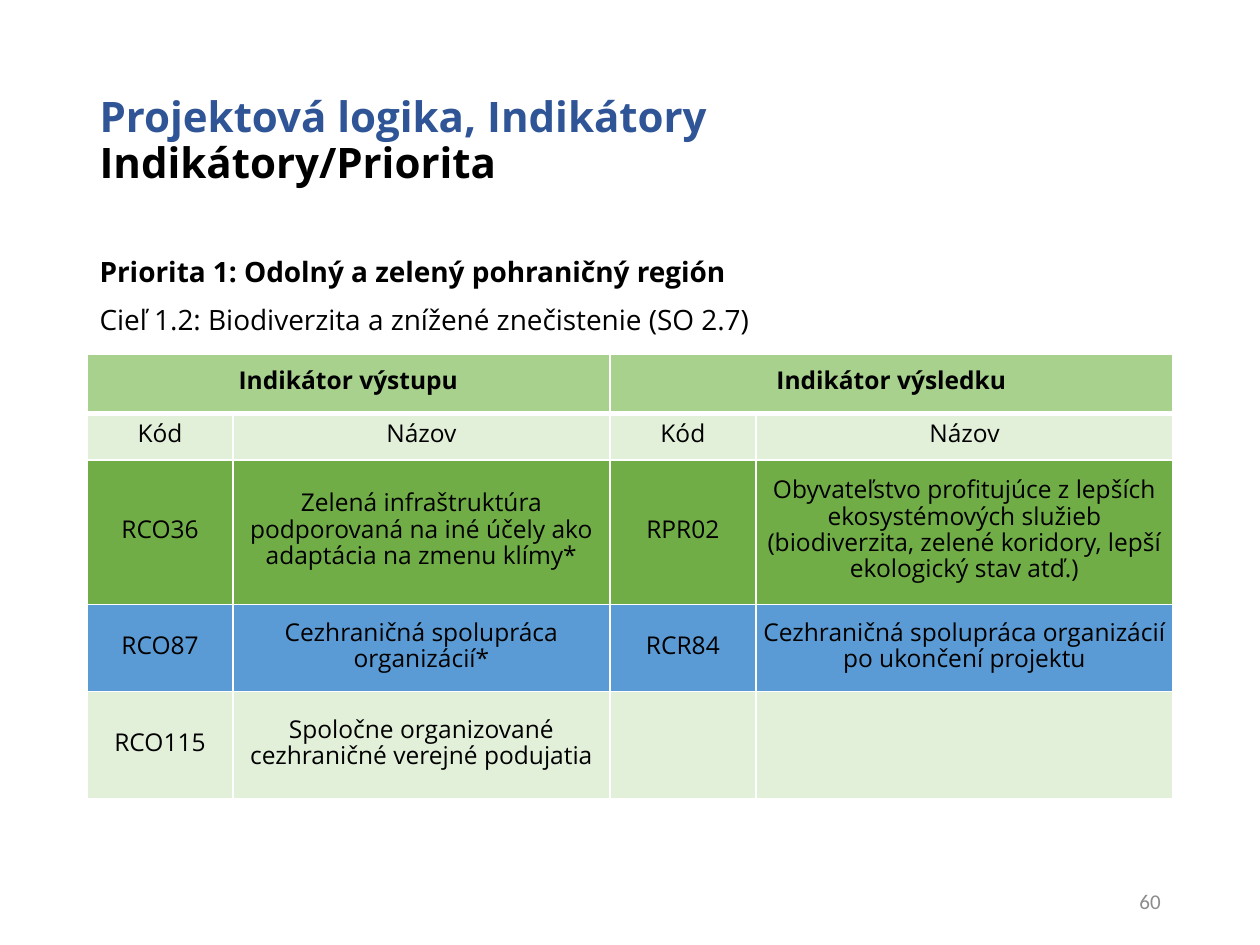
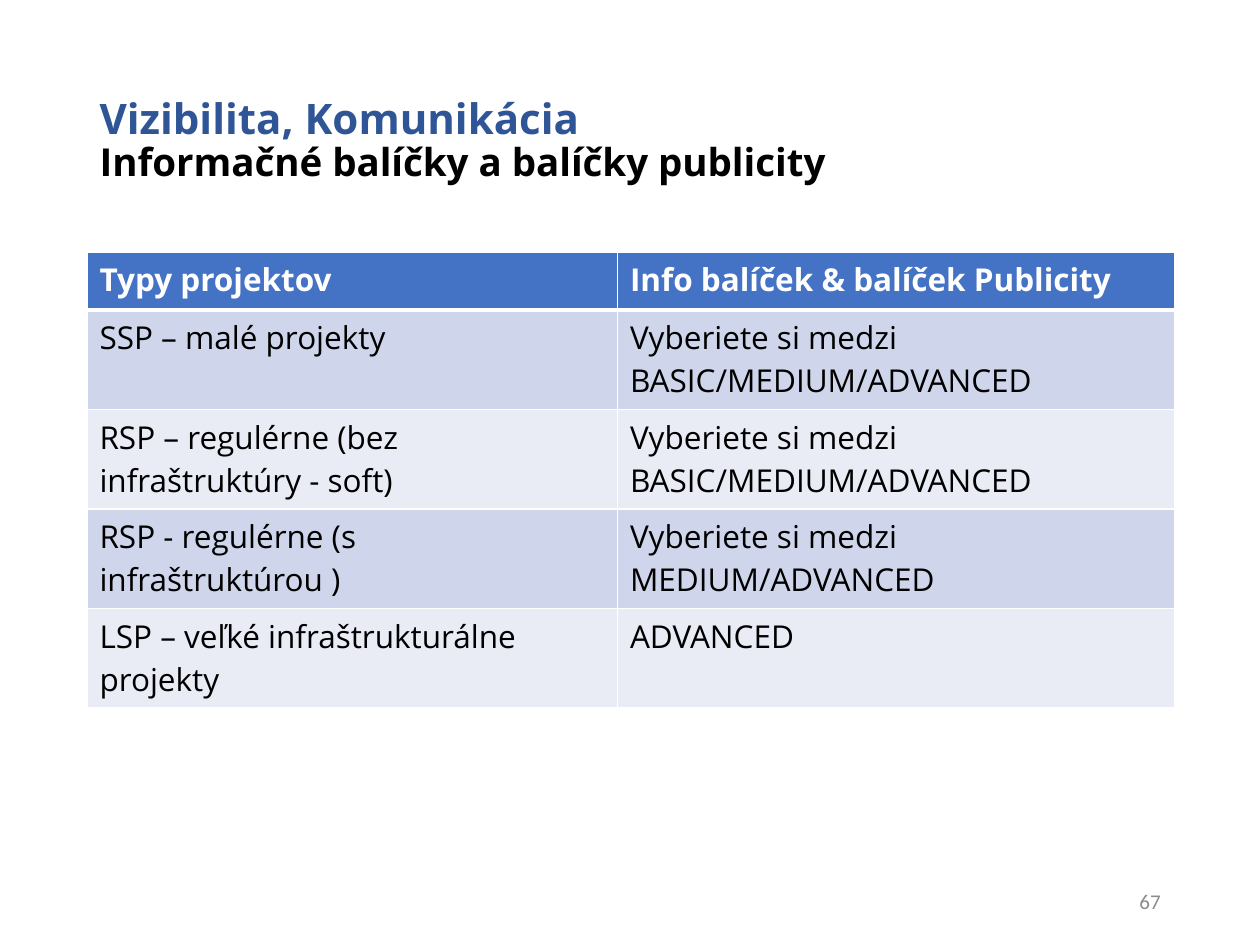
import dataclasses
import typing

import pptx
import pptx.dml.color
import pptx.enum.text
import pptx.oxml
import pptx.oxml.ns
import pptx.util

Inches, Pt = pptx.util.Inches, pptx.util.Pt
ALIGN, ANCHOR = pptx.enum.text.PP_ALIGN, pptx.enum.text.MSO_ANCHOR

# Shared look
FONT = "Open Sans"
BLACK, WHITE, NAVY, GREY = "000000", "FFFFFF", "2F5597", "8C8C8C"
GREEN, LIME, PALE, SKY = "70AD47", "A9D18E", "E2F0D9", "5B9BD5"
BLUE, MIST, HAZE = "4472C4", "CFD5EA", "E9EBF5"
LEFT, WIDE = 0.69, 8.62
XMLNS = pptx.oxml.ns.nsdecls("a")


@dataclasses.dataclass
class Span:
    text: str
    size: float
    color: str = BLACK
    bold: bool = False
    font: str = FONT


@dataclasses.dataclass
class Row:
    high: float
    fill: str
    texts: list[str]
    color: str = BLACK
    bold: bool = False


@dataclasses.dataclass
class Grid:
    top: float
    cols: list[float]
    rows: list[Row]
    size: float
    cell: dict[str, typing.Any] = dataclasses.field(default_factory=dict)
    para: dict[str, typing.Any] = dataclasses.field(default_factory=dict)
    pairs: bool = False  # header cells each span two columns


def paint(code: str) -> pptx.dml.color.RGBColor:
    return pptx.dml.color.RGBColor.from_string(code)


def apply(item: typing.Any, vals: dict[str, typing.Any]) -> None:
    for name, val in vals.items():
        setattr(item, name, val)


def place(shape: typing.Any, left: float, top: float, wide: float, high: float) -> None:
    apply(shape, {"left": Inches(left), "top": Inches(top),
                  "width": Inches(wide), "height": Inches(high)})


def write(para: typing.Any, span: Span) -> None:
    run = para.add_run()
    run.text = span.text
    apply(run.font, {"size": Pt(span.size), "bold": span.bold, "name": span.font})
    run.font.color.rgb = paint(span.color)


def add_title(slide: typing.Any, head: str, sub: str, size: float) -> None:
    title = slide.shapes.title
    place(title, LEFT, 0.4, WIDE, 1.45)
    apply(title.text_frame, {"vertical_anchor": ANCHOR.MIDDLE,
                             "auto_size": pptx.enum.text.MSO_AUTO_SIZE.NONE})
    para = title.text_frame.paragraphs[0]
    apply(para, {"alignment": ALIGN.LEFT, "line_spacing": 0.9})
    write(para, Span(head, 24, NAVY, True))
    para.add_line_break()
    write(para, Span(sub, size, bold=True))


def add_body(slide: typing.Any, spans: list[Span]) -> None:
    body = slide.placeholders[1]
    place(body, LEFT, 2, WIDE, 4.46)
    frame = body.text_frame
    frame.auto_size = pptx.enum.text.MSO_AUTO_SIZE.NONE
    for i, span in enumerate(spans):
        para = frame.add_paragraph() if i else frame.paragraphs[0]
        apply(para, {"line_spacing": 0.9, "space_before": Pt(10 if i else 0)})
        props = para._p.get_or_add_pPr()
        apply(props, {"marL": 0, "indent": 0})
        props.append(pptx.oxml.parse_xml(f"<a:buNone {XMLNS}/>"))
        write(para, span)


def add_page(slide: typing.Any, page: int) -> None:
    box = slide.shapes.add_textbox(Inches(7.06), Inches(6.95), Inches(2.25), Inches(0.4))
    apply(box.text_frame, {"word_wrap": True, "vertical_anchor": ANCHOR.MIDDLE})
    para = box.text_frame.paragraphs[0]
    para.alignment = ALIGN.RIGHT
    write(para, Span(str(page), 12, GREY, font="Calibri"))


def edge(cell: typing.Any, row: int) -> None:
    """White cell lines, with a thick one below the header row."""
    props = cell._tc.get_or_add_tcPr()
    thick = {"T": row == 1, "B": row == 0}
    for side in "LRTB":
        width = Pt(3 if thick.get(side) else 1)
        props.append(pptx.oxml.parse_xml(
            f'<a:ln{side} {XMLNS} w="{width}"><a:solidFill>'
            f'<a:srgbClr val="{WHITE}"/></a:solidFill></a:ln{side}>'))


def add_grid(slide: typing.Any, grid: Grid) -> None:
    high = sum(row.high for row in grid.rows)
    table = slide.shapes.add_table(len(grid.rows), len(grid.cols), Inches(LEFT),
                                   Inches(grid.top), Inches(WIDE), Inches(high)).table
    for col, wide in zip(table.columns, grid.cols):
        col.width = Inches(wide)
    for r, row in enumerate(grid.rows):
        table.rows[r].height = Inches(row.high)
        for c in range(len(grid.cols)):
            cell = table.cell(r, c)
            edge(cell, r)
            cell.fill.solid()
            cell.fill.fore_color.rgb = paint(row.fill)
            apply(cell, grid.cell)
        step = 2 if grid.pairs and r == 0 else 1
        for i, text in enumerate(row.texts):
            cell = table.cell(r, i * step)
            if step == 2:
                cell.merge(table.cell(r, i * step + 1))
            para = cell.text_frame.paragraphs[0]
            apply(para, grid.para)
            write(para, Span(text, grid.size, row.color, row.bold))


# Slide content
GOALS = [
    Span("Priorita 1: Odolný a zelený pohraničný región", 16, bold=True),
    Span("Cieľ 1.2: Biodiverzita a znížené znečistenie (SO 2.7)", 16),
]

CODES = Grid(2.81, [1.16, 2.99, 1.16, 3.31], [
    Row(0.47, LIME, ["Indikátor výstupu", "Indikátor výsledku"], bold=True),
    Row(0.37, PALE, ["Kód", "Názov"] * 2),
    Row(1.15, GREEN, [
        "RCO36",
        "Zelená infraštruktúra podporovaná na iné účely ako adaptácia na zmenu klímy*",
        "RPR02",
        "Obyvateľstvo profitujúce z lepších ekosystémových služieb "
        "(biodiverzita, zelené koridory, lepší ekologický stav atď.)"]),
    Row(0.69, SKY, [
        "RCO87", "Cezhraničná spolupráca organizácií*",
        "RCR84", "Cezhraničná spolupráca organizácií po ukončení projektu"]),
    Row(0.85, PALE, ["RCO115", "Spoločne organizované cezhraničné verejné podujatia"]),
], 14, pairs=True,
    cell={"vertical_anchor": ANCHOR.MIDDLE, "margin_left": Inches(0.05),
          "margin_right": Inches(0.05), "margin_top": 0, "margin_bottom": 0},
    para={"alignment": ALIGN.CENTER, "line_spacing": Pt(15)})

PICK = "Vyberiete si medzi "
TALL = 0.79  # fits two lines of text
PACKS = Grid(2, [4.21, 4.42], [
    Row(0.46, BLUE, ["Typy projektov", "Info balíček & balíček Publicity"], WHITE, True),
    Row(TALL, MIST, ["SSP – malé projekty", PICK + "BASIC/MEDIUM/ADVANCED"]),
    Row(TALL, HAZE, ["RSP – regulérne (bez infraštruktúry - soft)",
                     PICK + "BASIC/MEDIUM/ADVANCED"]),
    Row(TALL, MIST, ["RSP - regulérne (s infraštruktúrou )", PICK + "MEDIUM/ADVANCED"]),
    Row(TALL, HAZE, ["LSP – veľké infraštrukturálne projekty", "ADVANCED"]),
], 18)


def main() -> None:
    deck = pptx.Presentation()
    apply(deck, {"slide_width": Inches(10), "slide_height": Inches(7.5)})
    full, bare = deck.slide_layouts[1], deck.slide_layouts[5]

    # Indicators by priority
    slide = deck.slides.add_slide(full)
    add_title(slide, "Projektová logika, Indikátory", "Indikátory/Priorita", 24)
    add_body(slide, GOALS)
    add_page(slide, 60)
    add_grid(slide, CODES)

    # Publicity packages
    slide = deck.slides.add_slide(bare)
    add_title(slide, "Vizibilita, Komunikácia", "Informačné balíčky a balíčky publicity", 22)
    add_page(slide, 67)
    add_grid(slide, PACKS)

    deck.save("out.pptx")


if __name__ == "__main__":
    main()
